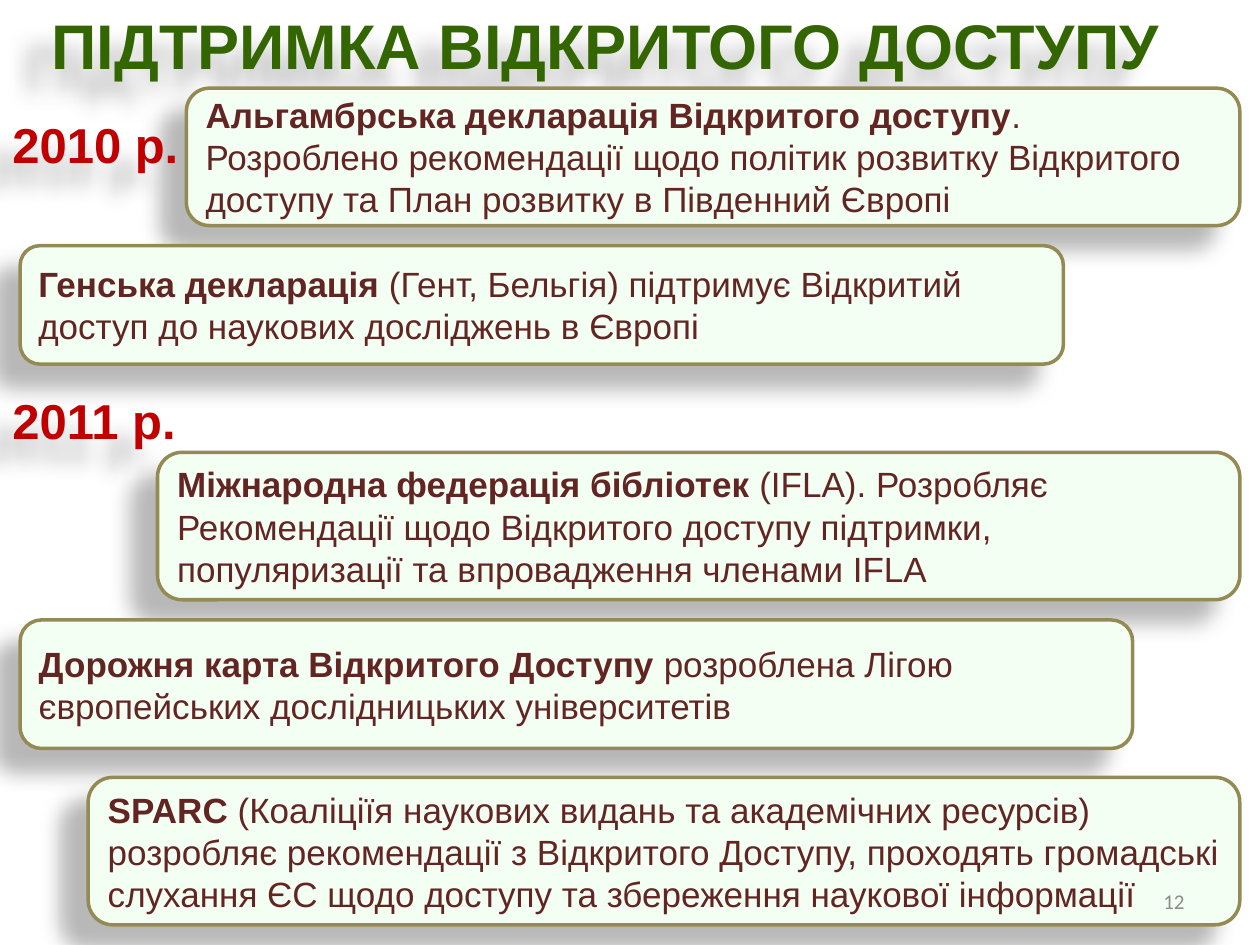
from lxml.etree import SubElement
from pptx import Presentation
from pptx.dml.color import RGBColor
from pptx.enum.shapes import MSO_SHAPE
from pptx.enum.text import MSO_ANCHOR, MSO_AUTO_SIZE, PP_ALIGN
from pptx.oxml.ns import qn
from pptx.util import Inches, Pt

COLORS = {
    "title": "336600",
    "year": "C00000",
    "card_fill": "F3FFF3",
    "card_line": "948A54",
    "card_text": "632523",
    "number": "8C8C8C",
    "shadow": "000000",
}

FONTS = {
    "title": {"name": "Arial", "size": Pt(36), "bold": True},
    "year": {"name": "Arial", "size": Pt(28), "bold": True},
    "card_text": {"name": "Arial", "size": Pt(20)},
    "number": {"name": "Calibri", "size": Pt(12)},
}

SHADOW = {
    "blurRad": Pt(11.8),
    "dist": Pt(19.7),
    "dir": 141 * 60000,
    "algn": "ctr",
    "rotWithShape": 0,
}

CARDS = [
    ((1.48, 0.7, 8.36, 1.09), "Альгамбрська декларація Відкритого доступу",
     ". Розроблено рекомендації щодо політик розвитку Відкритого доступу "
     "та План розвитку в Південний Європі"),
    ((0.16, 1.95, 8.28, 0.94), "Генська декларація",
     " (Гент, Бельгія) підтримує Відкритий доступ до наукових досліджень в Європі"),
    ((1.25, 3.59, 8.59, 1.17), "Міжнародна федерація бібліотек",
     " (IFLA). Розробляє Рекомендації щодо Відкритого доступу підтримки, "
     "популяризації та впровадження членами IFLA"),
    ((0.16, 4.92, 8.83, 1.02), "Дорожня карта Відкритого Доступу",
     " розроблена Лігою європейських дослідницьких університетів"),
    ((0.7, 6.17, 9.14, 1.17), "SPARC ",
     "(Коаліціїя наукових видань та академічних ресурсів) розробляє рекомендації "
     "з Відкритого Доступу, проходять громадські слухання ЄС щодо доступу "
     "та збереження наукової інформації"),
]

YEARS = [
    ((0, 0.86, 1.54, 0.57), "2010 р.", False),
    ((0, 3.05, 1.95, 0.57), "2011 р.", True),
]


def color(name):
    return RGBColor.from_string(COLORS[name])


def set_attributes(target, values):
    for name, value in values.items():
        setattr(target, name, value)


def place(shape, box):
    names = ("left", "top", "width", "height")
    set_attributes(shape, dict(zip(names, map(Inches, box))))


def add_shadow(shape):
    shape.shadow.inherit = False
    effects = shape._element.spPr.find(qn("a:effectLst"))
    outer = SubElement(effects, qn("a:outerShdw"),
                       {name: str(value) for name, value in SHADOW.items()})
    tint = SubElement(outer, qn("a:srgbClr"), val=COLORS["shadow"])
    SubElement(tint, qn("a:alpha"), val="28000")


def add_run(paragraph, text, style, **extra):
    run = paragraph.add_run()
    run.text = text
    set_attributes(run.font, {**FONTS[style], **extra})
    run.font.color.rgb = color(style)


def write_line(shape, text, style, alignment=PP_ALIGN.LEFT, **frame_values):
    set_attributes(shape.text_frame, {"word_wrap": True, **frame_values})
    paragraph = shape.text_frame.paragraphs[0]
    paragraph.alignment = alignment
    add_run(paragraph, text, style)


def add_title(slide, text):
    title = slide.shapes.title
    place(title, (0.31, 0, 9.52, 0.71))
    write_line(title, text, "title", vertical_anchor=MSO_ANCHOR.TOP,
               auto_size=MSO_AUTO_SIZE.SHAPE_TO_FIT_TEXT)
    add_shadow(title)


def add_card(slide, box, heading, body):
    card = slide.shapes.add_shape(MSO_SHAPE.ROUNDED_RECTANGLE, *map(Inches, box))
    card.fill.solid()
    card.fill.fore_color.rgb = color("card_fill")
    card.line.color.rgb = color("card_line")
    card.line.width = Pt(2)
    add_shadow(card)
    set_attributes(card.text_frame,
                   {"word_wrap": True, "vertical_anchor": MSO_ANCHOR.MIDDLE})
    paragraph = card.text_frame.paragraphs[0]
    paragraph.alignment = PP_ALIGN.LEFT
    add_run(paragraph, heading, "card_text", bold=True)
    add_run(paragraph, body, "card_text", bold=False)


def add_year(slide, box, text, wrap):
    year = slide.shapes.add_textbox(*map(Inches, box))
    write_line(year, text, "year", word_wrap=wrap,
               auto_size=MSO_AUTO_SIZE.SHAPE_TO_FIT_TEXT)
    add_shadow(year)


def add_slide_number(slide, text):
    number = slide.shapes.add_textbox(*map(Inches, (7.17, 6.95, 2.33, 0.4)))
    write_line(number, text, "number", PP_ALIGN.RIGHT,
               vertical_anchor=MSO_ANCHOR.MIDDLE)


def main():
    presentation = Presentation()
    set_attributes(presentation,
                   {"slide_width": Inches(10), "slide_height": Inches(7.5)})
    slide = presentation.slides.add_slide(presentation.slide_layouts[5])
    add_title(slide, "ПІДТРИМКА ВІДКРИТОГО ДОСТУПУ")
    for card in CARDS:
        add_card(slide, *card)
    for year in YEARS:
        add_year(slide, *year)
    add_slide_number(slide, "12")
    presentation.save("out.pptx")


if __name__ == "__main__":
    main()
